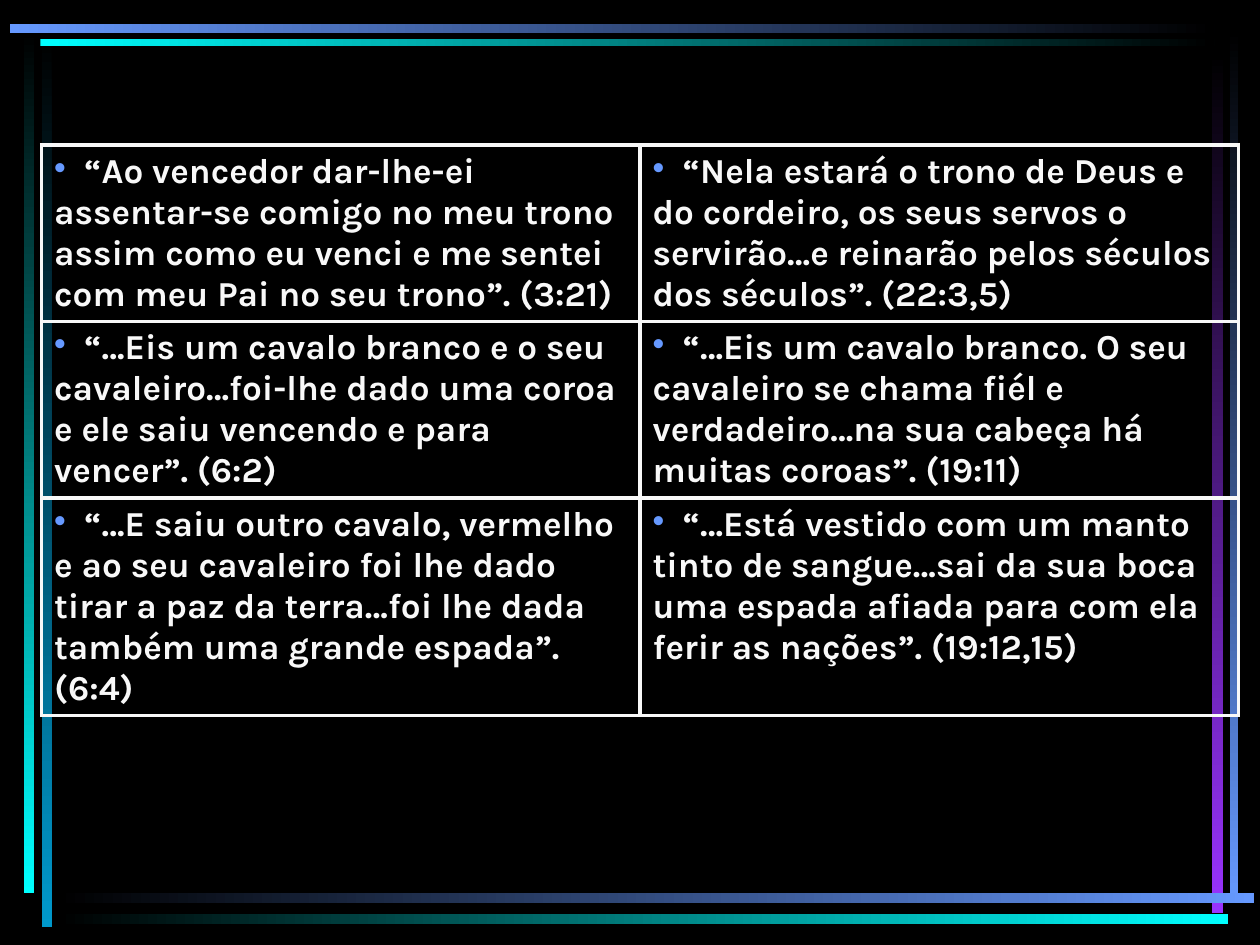
from lxml import etree
from pptx import Presentation
from pptx import util as u
from pptx.dml.color import RGBColor
from pptx.enum import shapes
from pptx.oxml import ns

FONT = "Karla"
BLACK, WHITE = "000000", "F8F8F8"
BLUE, CYAN, TEAL, PURPLE = "6699FF", "00FFFF", "0099CC", "9933FF"
DOWN, RIGHT = 270, 0

# left, top, width, height, first colour, last colour, gradient direction
FRAME_BARS = [
    (0.33, 0.28, 0.08, 7.08, BLACK, TEAL, DOWN),
    (0.19, 0.25, 0.08, 6.84, BLACK, CYAN, DOWN),
    (9.76, 0.24, 0.07, 6.93, BLACK, BLUE, DOWN),
    (9.62, 0.42, 0.09, 6.83, BLACK, PURPLE, DOWN),
    (0.45, 7.09, 9.5, 0.08, BLACK, BLUE, RIGHT),
    (0.45, 7.25, 9.3, 0.08, BLACK, CYAN, RIGHT),
    (0.32, 0.31, 9.32, 0.06, CYAN, BLACK, RIGHT),
    (0.08, 0.19, 9.56, 0.07, BLUE, BLACK, RIGHT),
]

VERSES = [
    ("“Ao vencedor dar-lhe-ei assentar-se comigo no meu trono assim como eu "
     "venci e me sentei com meu Pai no seu trono”. (3:21)",
     "“Nela estará o trono de Deus e do cordeiro, os seus servos o "
     "servirão…e reinarão pelos séculos dos séculos”. (22:3,5)"),
    ("“…Eis um cavalo branco e o seu cavaleiro…foi-lhe dado uma coroa e ele "
     "saiu vencendo e para vencer”. (6:2)",
     "“…Eis um cavalo branco. O seu cavaleiro se chama fiél e "
     "verdadeiro…na sua cabeça há muitas coroas”. (19:11)"),
    ("“…E saiu outro cavalo, vermelho e ao seu cavaleiro foi lhe dado tirar a "
     "paz da terra…foi lhe dada também uma grande espada”. (6:4)",
     "“…Está vestido com um manto tinto de sangue…sai da sua boca uma espada "
     "afiada para com ela ferir as nações”. (19:12,15)"),
]
ROW_HEIGHTS = [1.33, 1.4, 1.39]


def color(value):
    return RGBColor.from_string(value)


def add_child(parent, tag, **attributes):
    return etree.SubElement(parent, ns.qn(tag), attributes)


def add_bar(page, left, top, width, height, first, last, direction):
    bar = page.shapes.add_shape(
        shapes.MSO_SHAPE.RECTANGLE,
        *(u.Inches(length) for length in (left, top, width, height)))
    bar.shadow.inherit = False
    bar.line.fill.background()
    bar.fill.gradient()
    bar.fill.gradient_angle = direction
    for stop, value in zip(bar.fill.gradient_stops, (first, last)):
        stop.color.rgb = color(value)


def add_borders(cell):
    properties = cell._tc.get_or_add_tcPr()
    for side in ("a:lnL", "a:lnR", "a:lnT", "a:lnB"):
        line = add_child(properties, side, w=str(u.Pt(2.25)))
        fill = add_child(line, "a:solidFill")
        add_child(fill, "a:srgbClr", val=WHITE)


def add_bullet(para):
    """Bullet flush with the wrapped lines; a tab stop sets the gap after it."""
    properties = para._p.get_or_add_pPr()
    properties.set("marL", "0")
    properties.set("indent", "0")
    spacing = add_child(properties, "a:spcBef")
    add_child(spacing, "a:spcPct", val="20000")
    bullet_color = add_child(properties, "a:buClr")
    add_child(bullet_color, "a:srgbClr", val=BLUE)
    add_child(properties, "a:buChar", char="•")
    tabs = add_child(properties, "a:tabLst")
    add_child(tabs, "a:tab", pos=str(u.Inches(0.24)), algn="l")


def fill_cell(cell, verse):
    add_borders(cell)
    cell.fill.background()
    para = cell.text_frame.paragraphs[0]
    para.text = "\t" + verse
    add_bullet(para)
    font = para.runs[0].font
    font.name, font.size, font.bold = FONT, u.Pt(20), True
    font.color.rgb = color(WHITE)


def add_verse_table(page):
    table = page.shapes.add_table(
        len(VERSES), 2, u.Inches(0.33), u.Inches(1.15),
        u.Inches(9.5), u.Inches(sum(ROW_HEIGHTS))).table
    table.first_row = table.horz_banding = False
    for row, height, verses in zip(table.rows, ROW_HEIGHTS, VERSES):
        row.height = u.Inches(height)
        for cell, verse in zip(row.cells, verses):
            fill_cell(cell, verse)


def main():
    deck = Presentation()
    deck.slide_width, deck.slide_height = u.Inches(10), u.Inches(7.5)
    page = deck.slides.add_slide(deck.slide_layouts[6])
    page.background.fill.solid()
    page.background.fill.fore_color.rgb = color(BLACK)
    for bar in FRAME_BARS:
        add_bar(page, *bar)
    add_verse_table(page)
    deck.save("out.pptx")


if __name__ == "__main__":
    main()
